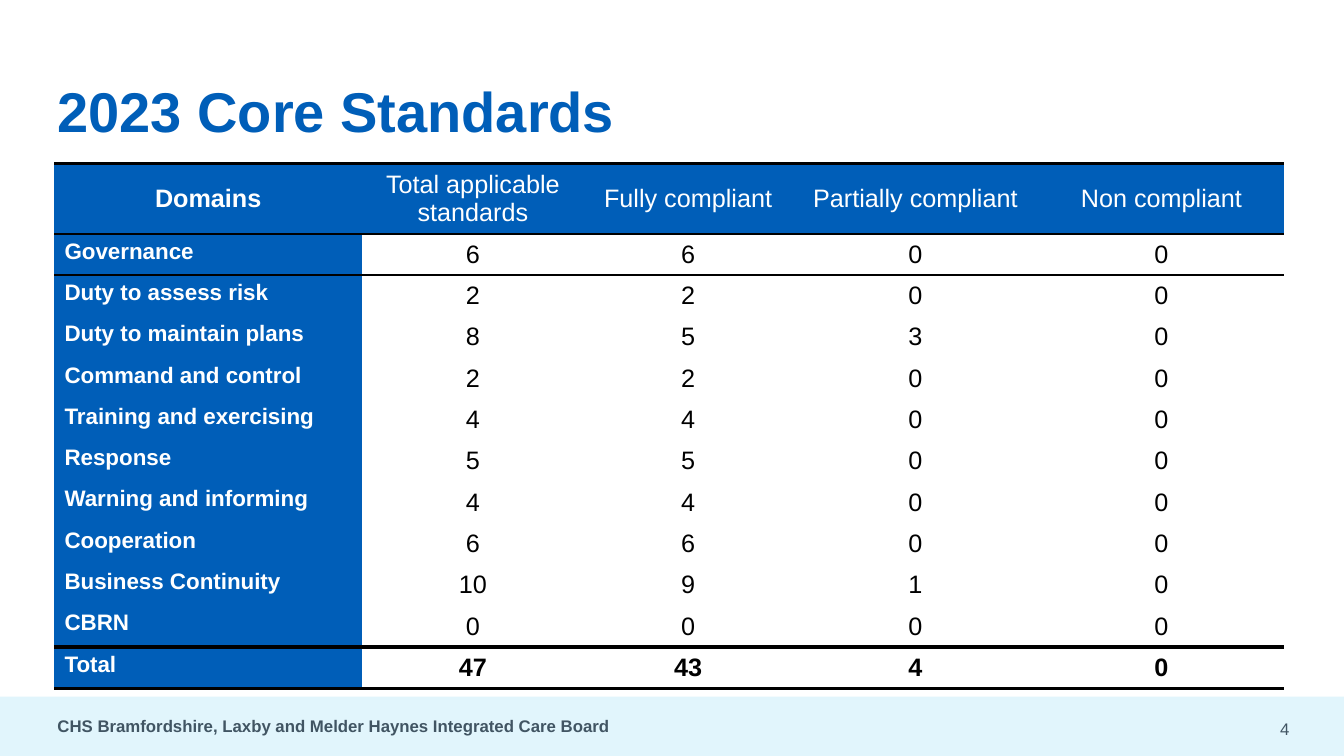
from lxml import etree
from pptx import Presentation
from pptx.dml.color import RGBColor
from pptx.enum.shapes import MSO_SHAPE
from pptx.enum.text import MSO_ANCHOR, PP_ALIGN
from pptx.oxml.ns import qn
from pptx.util import Inches, Pt

RECTANGLE = MSO_SHAPE.RECTANGLE
TOP, MIDDLE = MSO_ANCHOR.TOP, MSO_ANCHOR.MIDDLE
LEFT, CENTER, RIGHT = PP_ALIGN.LEFT, PP_ALIGN.CENTER, PP_ALIGN.RIGHT

BLUE = RGBColor(0x00, 0x5E, 0xB8)
PALE_BLUE = RGBColor(0xE1, 0xF5, 0xFC)
SLATE = RGBColor(0x41, 0x55, 0x63)
WHITE = RGBColor(0xFF, 0xFF, 0xFF)
BLACK = RGBColor(0x00, 0x00, 0x00)

FONT = "Arial"
PLAIN_TABLE_STYLE = "{2D5ABB26-0587-4C30-8999-92F81FD0307C}"
COLUMN_WIDTHS = (3.05, 2.2, 2.07, 2.44, 2.44)
HEADER_HEIGHT, ROW_HEIGHT = 0.66, 0.41

HEADINGS = ("Domains", "Total applicable standards", "Fully compliant",
            "Partially compliant", "Non compliant")
STANDARDS = (
    ("Governance", 6, 6, 0, 0),
    ("Duty to assess risk", 2, 2, 0, 0),
    ("Duty to maintain plans", 8, 5, 3, 0),
    ("Command and control", 2, 2, 0, 0),
    ("Training and exercising", 4, 4, 0, 0),
    ("Response", 5, 5, 0, 0),
    ("Warning and informing", 4, 4, 0, 0),
    ("Cooperation", 6, 6, 0, 0),
    ("Business Continuity", 10, 9, 1, 0),
    ("CBRN", 0, 0, 0, 0),
    ("Total", 47, 43, 4, 0),
)


def write(frame, text, size, color, bold=False, align=LEFT):
    """Put one formatted paragraph in a text frame."""
    frame.text = text
    paragraph = frame.paragraphs[0]
    paragraph.alignment = align
    font = paragraph.runs[0].font
    font.name, font.size, font.bold = FONT, Pt(size), bold
    font.color.rgb = color


def add_label(slide, box, text, size, color, bold=False, align=LEFT):
    """Add a middle-anchored text box without margins."""
    frame = slide.shapes.add_textbox(*map(Inches, box)).text_frame
    frame.word_wrap = True
    frame.vertical_anchor = MIDDLE
    frame.margin_left = frame.margin_right = 0
    frame.margin_top = frame.margin_bottom = 0
    write(frame, text, size, color, bold, align)


def add_rule(cell, side, width):
    """Draw a black border on one side of a cell, ahead of its fill."""
    properties = cell._tc.get_or_add_tcPr()
    line = etree.Element(qn(f"a:ln{side}"), w=str(Pt(width)))
    fill = etree.SubElement(line, qn("a:solidFill"))
    etree.SubElement(fill, qn("a:srgbClr"), val=str(BLACK))
    borders = [child for child in properties if child.tag == qn("a:lnT")]
    properties.insert(len(borders), line)


def fill_cell(cell, text, row, column):
    is_header, is_domain = row == 0, column == 0
    is_row_label = is_domain and not is_header
    is_total = row == len(STANDARDS)
    is_blue = is_header or is_domain
    cell.fill.solid()
    cell.fill.fore_color.rgb = BLUE if is_blue else WHITE
    cell.vertical_anchor = TOP if is_row_label else MIDDLE
    write(cell.text_frame, str(text), 16 if is_row_label else 18,
          WHITE if is_blue else BLACK, is_domain or is_total,
          LEFT if is_row_label else CENTER)


def add_standards_table(slide, box):
    rows = (HEADINGS, *STANDARDS)
    frame = slide.shapes.add_table(len(rows), len(HEADINGS), *map(Inches, box))
    table = frame.table
    table.first_row = table.horz_banding = False
    table._tbl.tblPr.find(qn("a:tableStyleId")).text = PLAIN_TABLE_STYLE
    for column, width in zip(table.columns, COLUMN_WIDTHS):
        column.width = Inches(width)

    rule_widths = {0: 2, 1: 2, len(rows) - 1: 4, len(rows): 2}
    for row, values in enumerate(rows):
        table.rows[row].height = Inches(ROW_HEIGHT if row else HEADER_HEIGHT)
        for column, value in enumerate(values):
            cell = table.cell(row, column)
            fill_cell(cell, value, row, column)
            for side, edge in (("T", row), ("B", row + 1)):
                if edge in rule_widths:
                    add_rule(cell, side, rule_widths[edge])


def add_footer(slide, box):
    left, top, width, height = box
    band = slide.shapes.add_shape(RECTANGLE, *map(Inches, box))
    band.shadow.inherit = False
    band.fill.solid()
    band.fill.fore_color.rgb = PALE_BLUE
    band.line.fill.background()
    add_label(slide, (left + 0.57, top, 8.1, height),
              "CHS Bramfordshire, Laxby and Melder Haynes Integrated Care Board",
              12, SLATE, bold=True)
    add_label(slide, (left + width - 1.07, top + 0.04, 0.53, height - 0.04),
              "4", 12, SLATE, align=RIGHT)


def main():
    deck = Presentation()
    deck.slide_width, deck.slide_height = Inches(13.33), Inches(7.5)
    slide = deck.slides.add_slide(deck.slide_layouts[6])
    add_footer(slide, (0, 6.91, 13.33, 0.59))
    add_label(slide, (0.57, 0.42, 9.64, 1.35), "2023 Core Standards", 40, BLUE,
              bold=True)
    add_standards_table(slide, (0.54, 1.62, 12.2, 5.16))
    deck.save("out.pptx")


if __name__ == "__main__":
    main()
